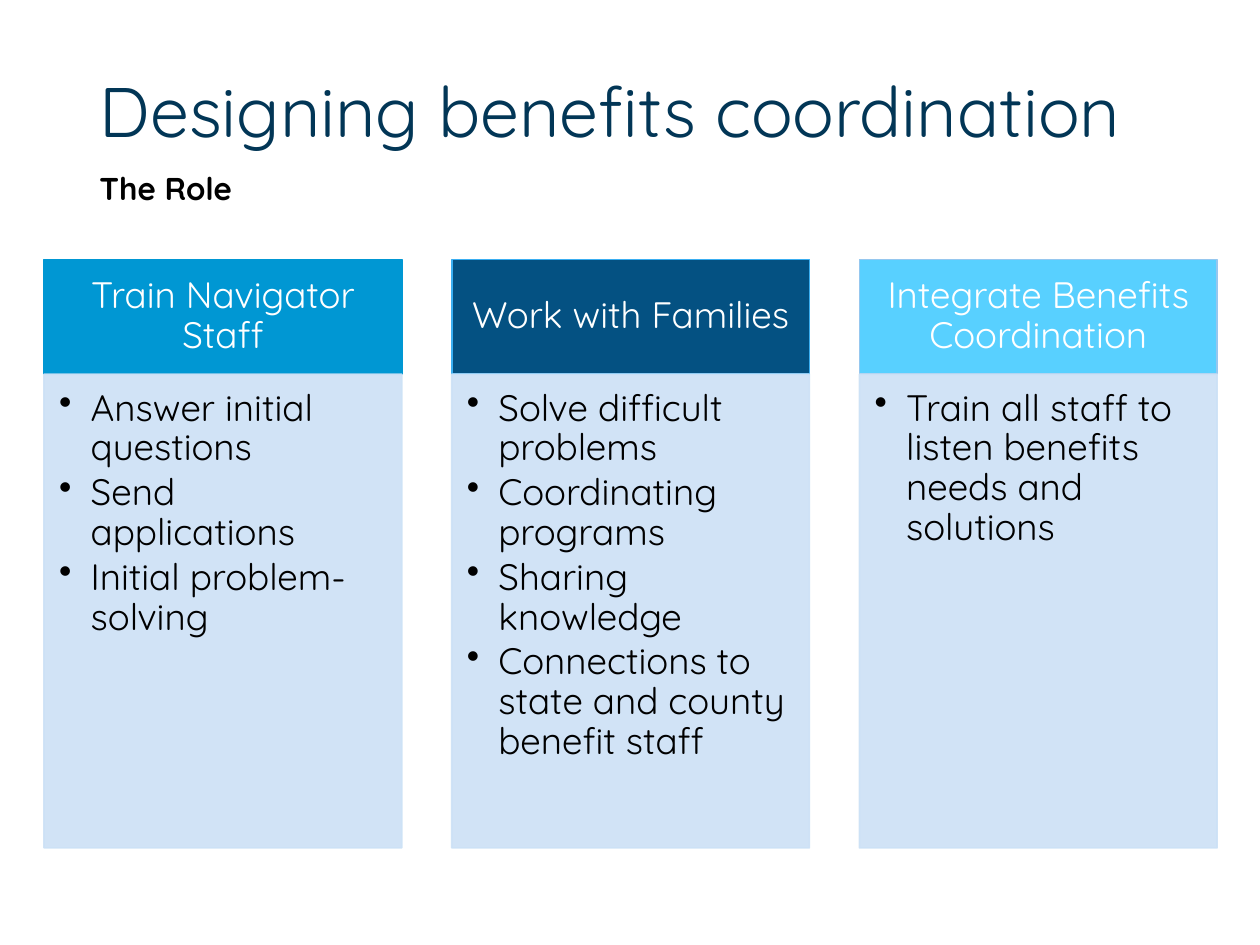
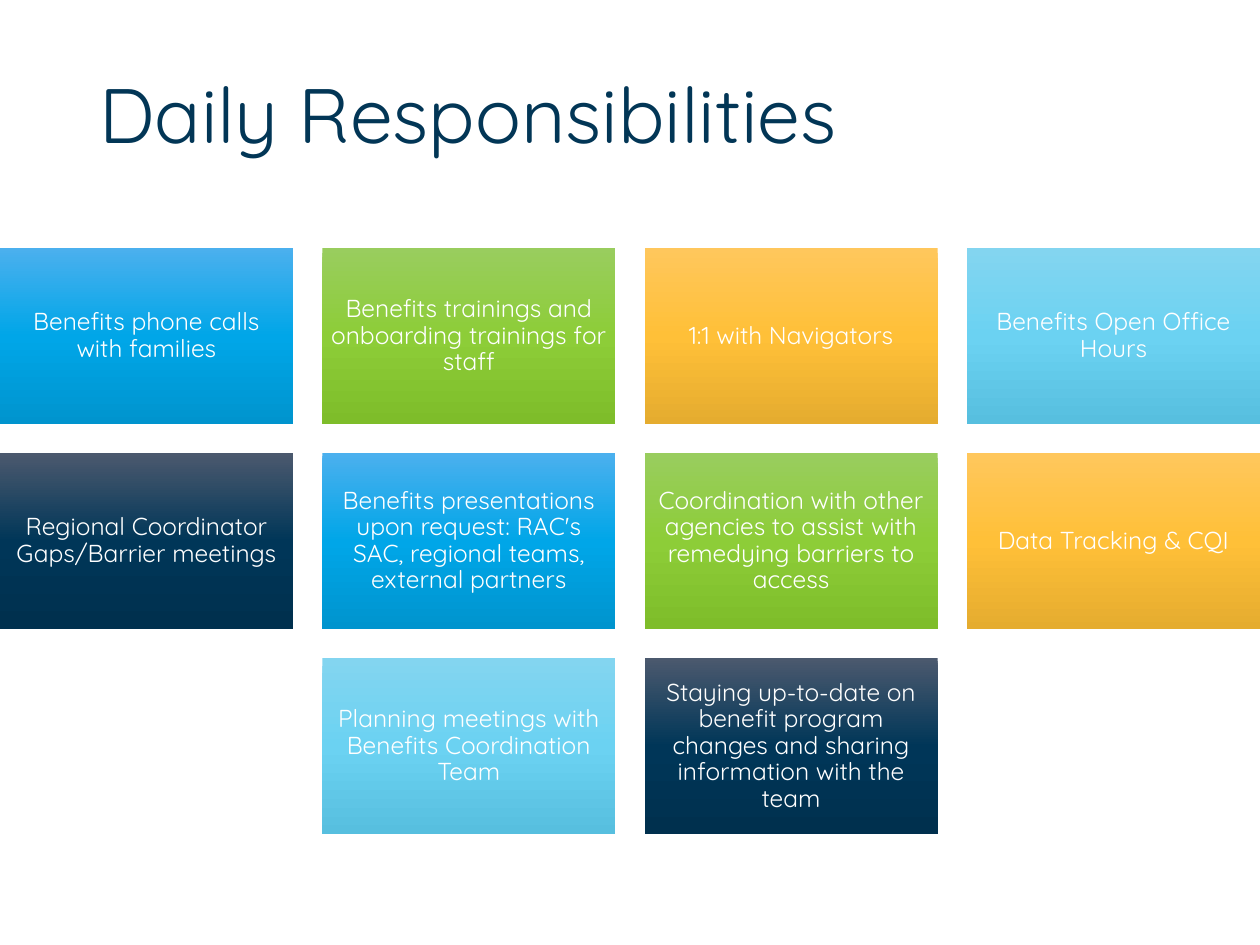
"""Build two slides on the benefits coordination role and its daily duties."""
from dataclasses import dataclass
from itertools import cycle

from lxml import etree
from pptx import Presentation
from pptx import util as u
from pptx.dml.color import RGBColor
from pptx.enum import shapes, text
from pptx.oxml import ns

WIDE, HIGH = 10, 7.5
FONT = "Quicksand"
INK = {
    "title": "023656", "black": "000000", "white": "FFFFFF", "panel": "CCE1F6",
    "blue": "0097D3", "navy": "045182", "sky": "58D0FF",
    "navy edge": "3AAEF1", "sky edge": "95C7EF",
}
FADES = {
    "blue": ("4BB0EE", "00A6E8", "0094CE"),
    "green": ("99CD5E", "8DCD38", "7EBD2A"),
    "gold": ("FFC75C", "FFC038", "E5AC2F"),
    "sky": ("83D5F0", "6BD2F2", "57BFDF"),
    "navy": ("4B596E", "003658", "00304E"),
}


@dataclass(frozen=True)
class Box:
    """A rectangle in inches."""
    left: float
    top: float
    wide: float
    high: float


@dataclass(frozen=True)
class Grid:
    """Equal columns over a span; gap is a share of the column width."""
    left: float
    top: float
    span: float
    cols: int
    gap: float

    @property
    def wide(self) -> float:
        """Width of one column."""
        return self.span / (self.cols + self.gap * (self.cols - 1))

    def cell(self, col: float, row: int, high: float) -> Box:
        """Box of one cell, with the same gap across and down."""
        gap = self.gap * self.wide
        return Box(self.left + col * (self.wide + gap),
                   self.top + row * (high + gap), self.wide, high)


@dataclass(frozen=True)
class Style:
    """How text sits and looks."""
    size: float
    ink: str
    pads: tuple = (0.1, 0.05, 0.1, 0.05)
    align: text.PP_ALIGN = text.PP_ALIGN.LEFT
    anchor: text.MSO_ANCHOR = text.MSO_ANCHOR.TOP
    lines: float = 0.9
    bold: bool = False
    dots: bool = False


@dataclass(frozen=True)
class Column:
    """A headed column of points."""
    head: str
    fill: str
    edge: str
    points: tuple


MID = {"align": text.PP_ALIGN.CENTER, "anchor": text.MSO_ANCHOR.MIDDLE}
HEAD = Style(21, "white", (0.16, 0.09, 0.16, 0.09), **MID)
BODY = Style(21, "black", (0.12, 0.12, 0.16, 0.18), dots=True)
TILE = Style(14, "white", (0.06,) * 4, **MID)
ROLE = Style(18, "black", lines=1, bold=True)

COLUMNS = (
    Column("Train Navigator Staff", "blue", "blue",
           ("Answer initial questions", "Send applications",
            "Initial problem-solving")),
    Column("Work with Families", "navy", "navy edge",
           ("Solve difficult problems", "Coordinating programs",
            "Sharing knowledge",
            "Connections to state and county benefit staff")),
    Column("Integrate Benefits Coordination", "sky", "sky edge",
           ("Train all staff to listen benefits needs and solutions",)),
)
DUTIES = (
    "Benefits phone calls with families",
    "Benefits trainings and onboarding trainings for staff",
    "1:1 with Navigators",
    "Benefits Open Office Hours",
    "Regional Coordinator Gaps/Barrier meetings",
    "Benefits presentations upon request: RAC's SAC, regional teams, external partners",
    "Coordination with other agencies to assist with remedying barriers to access",
    "Data Tracking & CQI",
    "Planning meetings with Benefits Coordination Team",
    "Staying up-to-date on benefit program changes and sharing information with the team",
)


def place(box: Box) -> tuple:
    """Give a box as lengths."""
    return tuple(map(u.Inches, (box.left, box.top, box.wide, box.high)))


def write(shape, words: tuple, style: Style) -> None:
    """Fill a shape with styled paragraphs."""
    frame = shape.text_frame
    frame.word_wrap = True
    frame.vertical_anchor = style.anchor
    (frame.margin_left, frame.margin_top,
     frame.margin_right, frame.margin_bottom) = map(u.Inches, style.pads)
    for num, word in enumerate(words):
        para = frame.add_paragraph() if num else frame.paragraphs[0]
        para.text = word
        if style.dots:
            props = para._p.get_or_add_pPr()
            props.set("marL", str(u.Inches(0.25)))
            props.set("indent", str(u.Inches(-0.25)))
            etree.SubElement(props, ns.qn("a:buChar")).set("char", "•")
            para.space_after = u.Pt(3)
        para.alignment = style.align
        para.line_spacing = style.lines
        para.font.name = FONT
        para.font.size = u.Pt(style.size)
        para.font.bold = style.bold
        para.font.color.rgb = RGBColor.from_string(INK[style.ink])


def label(slide, box: Box, word: str, style: Style) -> None:
    """Add a text box."""
    write(slide.shapes.add_textbox(*place(box)), (word,), style)


def title(slide, word: str, size: float, wide: float) -> None:
    """Add the slide title."""
    label(slide, Box(0.69, 0.56, wide, 1.45), word, Style(size, "title"))


def block(slide, box: Box, words: tuple, style: Style):
    """Add a rectangle with text."""
    shape = slide.shapes.add_shape(shapes.MSO_SHAPE.RECTANGLE, *place(box))
    shape.shadow.inherit = False
    write(shape, words, style)
    return shape


def paint(shape, fill: str, edge: str, alpha: int = 100) -> None:
    """Give a shape a plain fill and a thin line."""
    shape.fill.solid()
    shape.fill.fore_color.rgb = RGBColor.from_string(INK[fill])
    shape.line.color.rgb = RGBColor.from_string(INK[edge])
    shape.line.width = u.Pt(1)
    if alpha < 100:
        for tint in shape._element.spPr.iter(ns.qn("a:srgbClr")):
            etree.SubElement(tint, ns.qn("a:alpha")).set("val", str(alpha * 1000))


def fade(shape, tints: tuple) -> None:
    """Give a shape a fill that runs evenly through the tints from the top."""
    shape.line.fill.background()
    shape.fill.gradient()
    shape.fill.gradient_angle = 270
    stops = next(shape._element.spPr.iter(ns.qn("a:gsLst")))
    for stop in list(stops):
        stops.remove(stop)
    for num, tint in enumerate(tints):
        stop = etree.SubElement(stops, ns.qn("a:gs"))
        stop.set("pos", str(num * 100000 // (len(tints) - 1)))
        etree.SubElement(stop, ns.qn("a:srgbClr")).set("val", tint)


def roles(slide) -> None:
    """Draw the slide on the role."""
    title(slide, "Designing benefits coordination", 40, 9.31)
    label(slide, Box(0.69, 1.29, 3.55, 0.4), "The Role", ROLE)
    grid = Grid(0.35, 2.06, WIDE - 2 * 0.35 + 0.01, 3, 0.14)
    for num, col in enumerate(COLUMNS):
        top = grid.cell(num, 0, 0.91)
        low = Box(top.left, top.top + top.high, top.wide, 3.76)
        paint(block(slide, top, (col.head,), HEAD), col.fill, col.edge)
        paint(block(slide, low, col.points, BODY), "panel", "panel", 90)


def duties(slide) -> None:
    """Draw the slide on daily duties, with a short last row centred."""
    title(slide, "Daily Responsibilities", 44, 8.62)
    grid = Grid(0, 1.97, WIDE, 4, 0.1)
    tints = cycle(FADES.values())
    for row, first in enumerate(range(0, len(DUTIES), grid.cols)):
        words = DUTIES[first:first + grid.cols]
        shift = (grid.cols - len(words)) / 2
        for col, word in enumerate(words):
            box = grid.cell(col + shift, row, 0.6 * grid.wide)
            fade(block(slide, box, (word,), TILE), next(tints))


def main() -> None:
    """Build and save the slides."""
    deck = Presentation()
    deck.slide_width, deck.slide_height = u.Inches(WIDE), u.Inches(HIGH)
    for draw in (roles, duties):
        draw(deck.slides.add_slide(deck.slide_layouts[6]))
    deck.save("out.pptx")


if __name__ == "__main__":
    main()
